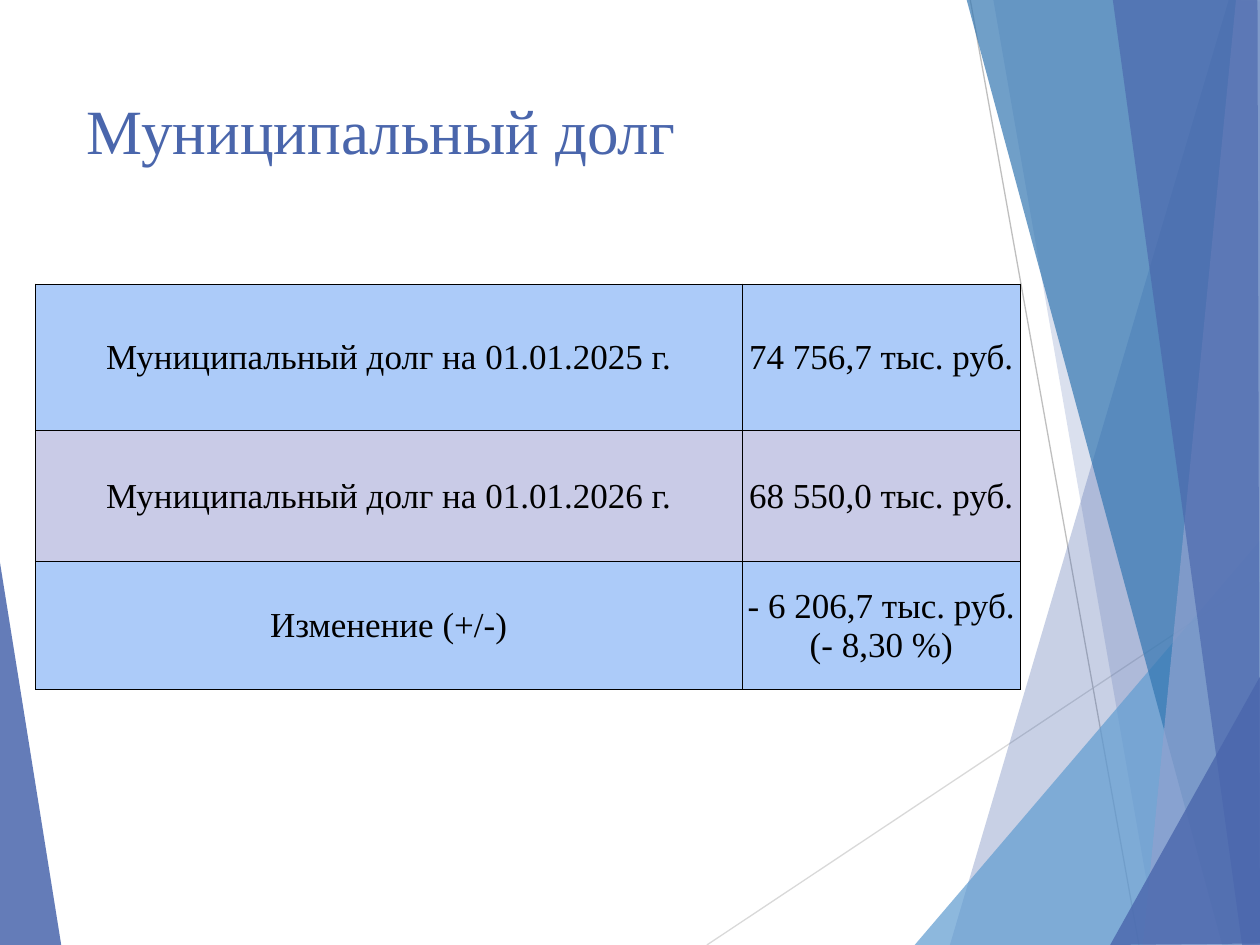
"""Builds the municipal debt slide with its faceted background."""
from lxml import etree
from pptx import Presentation
from pptx.dml.color import RGBColor
from pptx.enum.shapes import MSO_CONNECTOR
from pptx.enum.text import MSO_ANCHOR, PP_ALIGN
from pptx.oxml.ns import qn
from pptx.util import Cm, Pt

STRAIGHT = MSO_CONNECTOR.STRAIGHT
MIDDLE, TOP = MSO_ANCHOR.MIDDLE, MSO_ANCHOR.TOP
CENTER, LEFT = PP_ALIGN.CENTER, PP_ALIGN.LEFT

TITLE = "Муниципальный долг"
DEBT_ROWS = [
    ("Муниципальный долг на 01.01.2025 г.", "74 756,7 тыс. руб."),
    ("Муниципальный долг на 01.01.2026 г.", "68 550,0 тыс. руб."),
    ("Изменение (+/-)", "- 6 206,7 тыс. руб. (- 8,30 %)"),
]
COLUMN_WIDTHS = (14.25, 5.61)
ROW_HEIGHTS = (2.95, 2.64, 2.59)

THEME = {
    "font": "Times New Roman", "title_size": 36, "cell_size": 20,
    "blue": "4A66AC", "sky": "629DD1", "steel": "3477B2", "haze": "90A2CF",
    "text": "000000", "border": "000000", "bands": ("ACCBF9", "C9CBE7"),
    "light_line": "D9D9D9", "gray_line": "BFBFBF",
}

WIDTH, HEIGHT = 25.4, 19.05
EDGE, ABOVE = 25.43, -0.03
LEFT_FACET = ("blue", 85, [(-0.03, 11.15), (1.24, 19.08), (-0.03, HEIGHT)])
RAYS = [
    ("light_line", (14.25, HEIGHT), (EDGE, 11.61)),
    ("gray_line", (19.56, 0), (22.96, HEIGHT)),
]
RIGHT_FACETS = [
    ("blue", 30, [(24.77, 0), (19.15, HEIGHT), (25.45, 19.08), (EDGE, 0.03)]),
    ("blue", 20, [(20.02, ABOVE), (23.34, HEIGHT), (EDGE, HEIGHT), (EDGE, ABOVE)]),
    ("sky", 72, [(18.44, HEIGHT), (WIDTH, 10.9), (EDGE, HEIGHT)]),
    ("steel", 70, [(19.48, ABOVE), (24.64, HEIGHT), (EDGE, 19.02), (EDGE, ABOVE)]),
    ("haze", 70, [(24.92, ABOVE), (23.04, HEIGHT), (EDGE, HEIGHT), (WIDTH, ABOVE)]),
    ("blue", 65, [(22.43, ABOVE), (25.04, HEIGHT), (WIDTH, HEIGHT), (25.35, ABOVE)]),
    ("blue", 80, [(22.38, HEIGHT), (EDGE, 13.59), (EDGE, 19.02)]),
]


def color(name):
    return RGBColor.from_string(THEME.get(name, name))


def add_facet(page, name, opacity, points):
    corners = [(Cm(x), Cm(y)) for x, y in points]
    builder = page.shapes.build_freeform(*corners[0])
    builder.add_line_segments(corners[1:], close=True)
    facet = builder.convert_to_shape()
    facet.shadow.inherit = False
    facet.fill.solid()
    facet.fill.fore_color.rgb = color(name)
    facet.line.fill.background()
    tint = facet.fill._xPr.find(qn("a:solidFill"))[0]
    etree.SubElement(tint, qn("a:alpha"), val=str(opacity * 1000))


def add_ray(page, name, start, end):
    ray = page.shapes.add_connector(STRAIGHT, *map(Cm, start + end))
    ray.line.color.rgb = color(name)
    ray.line.width = Pt(0.75)
    etree.SubElement(ray._element.spPr, qn("a:effectLst"))


def format_text(frame, size, name, alignment):
    for para in frame.paragraphs:
        para.alignment = alignment
        for span in para.runs:
            span.font.name = THEME["font"]
            span.font.size = Pt(size)
            span.font.bold = False
            span.font.color.rgb = color(name)


def add_borders(cell):
    properties = cell._tc.get_or_add_tcPr()
    for index, side in enumerate(("lnL", "lnR", "lnT", "lnB")):
        border = etree.Element(qn(f"a:{side}"), w=str(Pt(0.25)))
        fill = etree.SubElement(border, qn("a:solidFill"))
        etree.SubElement(fill, qn("a:srgbClr"), val=THEME["border"])
        properties.insert(index, border)


def add_debt_table(page):
    table = page.shapes.add_table(
        len(DEBT_ROWS), len(COLUMN_WIDTHS), Cm(0.71), Cm(5.72),
        Cm(sum(COLUMN_WIDTHS)), Cm(sum(ROW_HEIGHTS))).table
    table.first_row = table.horz_banding = False
    for column, width in zip(table.columns, COLUMN_WIDTHS):
        column.width = Cm(width)
    for row_index, (row, height) in enumerate(zip(table.rows, ROW_HEIGHTS)):
        row.height = Cm(height)
        for cell, text in zip(row.cells, DEBT_ROWS[row_index]):
            cell.text_frame.text = text
            cell.vertical_anchor = MIDDLE
            cell.margin_left = cell.margin_right = cell.margin_top = Cm(0.03)
            cell.margin_bottom = 0
            cell.fill.solid()
            cell.fill.fore_color.rgb = color(THEME["bands"][row_index % 2])
            add_borders(cell)
            format_text(cell.text_frame, THEME["cell_size"], "text", CENTER)


def add_title(page):
    box = page.shapes.add_textbox(Cm(1.5), Cm(1.73), Cm(17.63), Cm(3.66))
    frame = box.text_frame
    frame.word_wrap = True
    frame.vertical_anchor = TOP
    frame.text = TITLE
    format_text(frame, THEME["title_size"], "blue", LEFT)


def main():
    deck = Presentation()
    deck.slide_width, deck.slide_height = Cm(WIDTH), Cm(HEIGHT)
    page = deck.slides.add_slide(deck.slide_layouts[6])
    add_facet(page, *LEFT_FACET)
    for ray in RAYS:
        add_ray(page, *ray)
    for facet in RIGHT_FACETS:
        add_facet(page, *facet)
    add_debt_table(page)
    add_title(page)
    deck.save("out.pptx")


if __name__ == "__main__":
    main()
